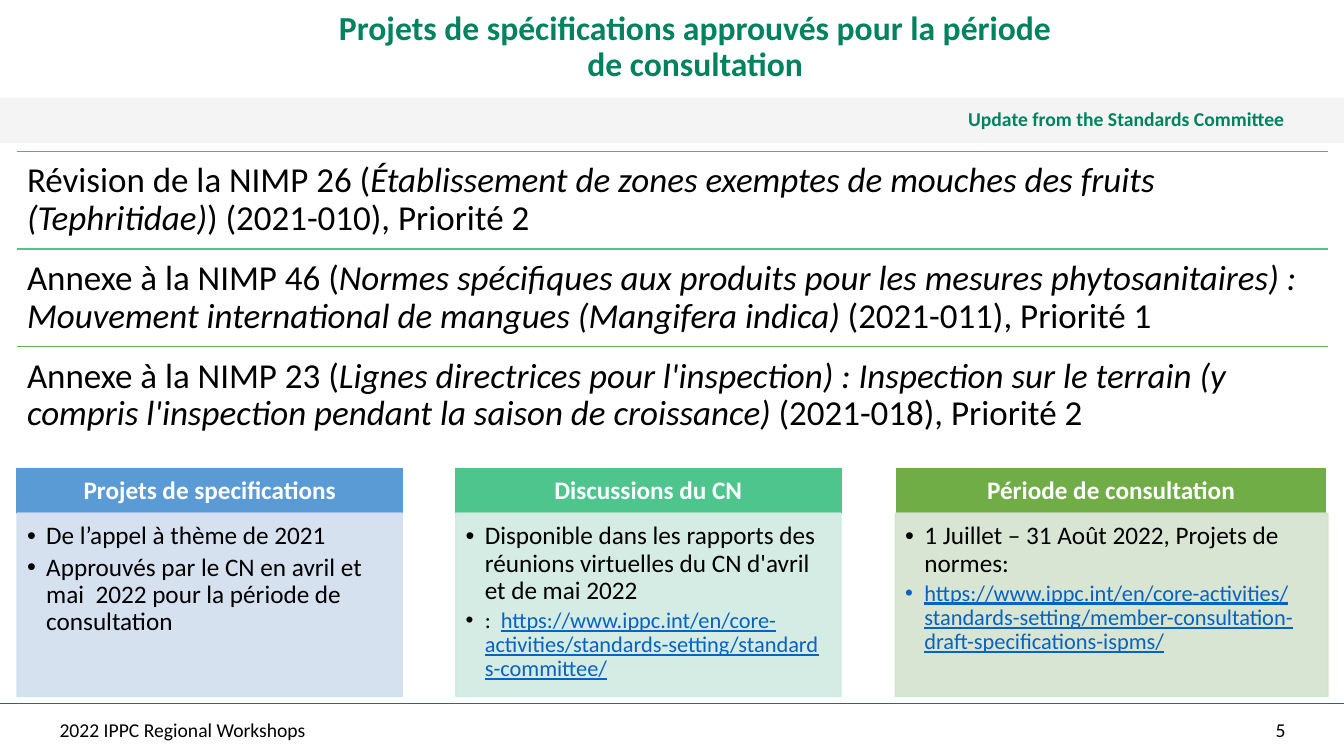
from lxml import etree
from pptx import Presentation
from pptx.dml.color import RGBColor
from pptx.enum.shapes import MSO_CONNECTOR, MSO_SHAPE
from pptx.enum.text import MSO_ANCHOR, PP_ALIGN
from pptx.oxml.ns import qn
from pptx.util import Inches, Pt

RECT = MSO_SHAPE.RECTANGLE
STRAIGHT = MSO_CONNECTOR.STRAIGHT
MIDDLE, TOP = MSO_ANCHOR.MIDDLE, MSO_ANCHOR.TOP
LEFT, CENTER, RIGHT = PP_ALIGN.LEFT, PP_ALIGN.CENTER, PP_ALIGN.RIGHT

GREEN = RGBColor(0x00, 0x82, 0x5F)
BLACK = RGBColor(0x00, 0x00, 0x00)
WHITE = RGBColor(0xFF, 0xFF, 0xFF)
BAND_GREY = RGBColor(0xE7, 0xE6, 0xE6)
LINK_BLUE = RGBColor(0x05, 0x63, 0xC1)
BLUE = RGBColor(0x5B, 0x9B, 0xD5)
MINT = RGBColor(0x4D, 0xC5, 0x8D)
LEAF = RGBColor(0x70, 0xAD, 0x47)
PALE_BLUE = RGBColor(0xD2, 0xDE, 0xEF)
PALE_MINT = RGBColor(0xD0, 0xEA, 0xE1)
PALE_LEAF = RGBColor(0xD5, 0xE3, 0xCF)

WIDTH = 13.33
prs = Presentation()
prs.slide_width, prs.slide_height = Inches(WIDTH), Inches(7.5)
slide = prs.slides.add_slide(prs.slide_layouts[6])
shapes = slide.shapes


def write(box, paragraphs, insets, anchor=MIDDLE, align=LEFT, bullets=False):
    """Fill a box; each run is (text, size, colour, set of font styles)."""
    frame = box.text_frame
    frame.word_wrap = True
    frame.vertical_anchor = anchor
    (frame.margin_left, frame.margin_top,
     frame.margin_right, frame.margin_bottom) = [Inches(i) for i in insets]
    for index, runs in enumerate(paragraphs):
        paragraph = frame.add_paragraph() if index else frame.paragraphs[0]
        paragraph.alignment = align
        paragraph.line_spacing = 0.9
        if bullets:
            paragraph.space_after = Pt(3)
            properties = paragraph._p.get_or_add_pPr()
            properties.set("marL", str(Inches(0.19)))
            properties.set("indent", str(-Inches(0.19)))
            etree.SubElement(properties, qn("a:buFont"), typeface="Arial")
            etree.SubElement(properties, qn("a:buChar"), char="•")
        for text, size, colour, styles in runs:
            run = paragraph.add_run()
            run.text = text
            font = run.font
            font.name, font.size, font.color.rgb = "Calibri", Pt(size), colour
            font.bold = "bold" in styles
            font.italic = "italic" in styles
            font.underline = "underline" in styles


def paint(shape, colour, opacity=100, outlined=True):
    shape.shadow.inherit = False
    shape.fill.solid()
    shape.fill.fore_color.rgb = colour
    if outlined:
        shape.line.color.rgb = colour
        shape.line.width = Pt(1)
    else:
        shape.line.fill.background()
    for colour_element in shape._element.spPr.iter(qn("a:srgbClr")):
        if opacity < 100:
            etree.SubElement(colour_element, qn("a:alpha"), val=str(opacity * 1000))


# Rules: footer line and one line above each specification
ROW_LEFT, ROW_TOP, ROW_WIDTH, ROW_HEIGHT = 0.17, 1.5, 13, 0.97
rules = [(0, WIDTH, 6.98, GREEN)]
for row, colour in enumerate([BLUE, MINT, LEAF]):
    rules.append((ROW_LEFT, ROW_LEFT + ROW_WIDTH, ROW_TOP + row * ROW_HEIGHT, colour))
for start, end, y, colour in rules:
    rule = shapes.add_connector(STRAIGHT, Inches(start), Inches(y), Inches(end), Inches(y))
    rule.line.color.rgb = colour
    rule.line.width = Pt(1)
    etree.SubElement(rule._element.spPr, qn("a:effectLst"))

# Title, subtitle band and footer
title = shapes.add_textbox(Inches(2.61), 0, Inches(8.37), Inches(1))
write(title, [[("Projets de spécifications approuvés pour la période de consultation",
                24, GREEN, {"bold"})]], (0.59, 0, 0.39, 0.05), align=CENTER)

MARGINS = (0.59, 0.05, 0.59, 0.05)
band = shapes.add_shape(RECT, 0, Inches(0.97), Inches(WIDTH), Inches(0.45))
paint(band, BAND_GREY, 42, outlined=False)
write(band, [[("Update from the Standards Committee", 14, GREEN, {"bold"})]],
      MARGINS, align=RIGHT)

event = shapes.add_textbox(0, Inches(7.06), Inches(8.25), Inches(0.38))
write(event, [[("2022 IPPC Regional Workshops", 14, BLACK, {})]], MARGINS)
page_number = shapes.add_textbox(Inches(11.92), Inches(7.06), Inches(1.42), Inches(0.38))
write(page_number, [[("5", 14, BLACK, {})]], MARGINS, align=RIGHT)

# Draft specifications
specifications = [
    ("Révision de la NIMP 26 (",
     "Établissement de zones exemptes de mouches des fruits (Tephritidae)",
     ") (2021-010), Priorité 2"),
    ("Annexe à la NIMP 46 (",
     "Normes spécifiques aux produits pour les mesures phytosanitaires) : "
     "Mouvement international de mangues (Mangifera indica) ",
     "(2021-011), Priorité 1"),
    ("Annexe à la NIMP 23 (",
     "Lignes directrices pour l'inspection) : Inspection sur le terrain "
     "(y compris l'inspection pendant la saison de croissance) ",
     "(2021-018), Priorité 2"),
]
for row, (standard, topic, number) in enumerate(specifications):
    specification = shapes.add_textbox(
        Inches(ROW_LEFT), Inches(ROW_TOP + row * ROW_HEIGHT),
        Inches(ROW_WIDTH), Inches(ROW_HEIGHT))
    write(specification, [[(standard, 25, BLACK, {}), (topic, 25, BLACK, {"italic"}),
                           (number, 25, BLACK, {})]], (0.1, 0.1, 0.1, 0.1))

# Cards: heading, its left and width, body left and width, colours, bullets
cards = [
    ("Projets de specifications", 0.17, 3.82, 0.17, 3.82, BLUE, PALE_BLUE, [
        [("De l’appel à thème de 2021", 18, BLACK, {})],
        [("Approuvés par le CN en avril et mai  2022 pour la période de consultation",
          18, BLACK, {})],
    ]),
    ("Discussions du CN", 4.52, 3.82, 4.52, 3.82, MINT, PALE_MINT, [
        [("Disponible dans les rapports des réunions virtuelles du CN d'avril "
          "et de mai 2022", 18, BLACK, {})],
        [(":  ", 16, BLACK, {}),
         ("https://www.ippc.int/en/core-activities/standards-setting/"
          "standards-committee/", 16, LINK_BLUE, {"underline"})],
    ]),
    ("Période de consultation", 8.89, 4.26, 8.88, 4.29, LEAF, PALE_LEAF, [
        [("1 Juillet – 31 Août 2022, Projets de normes:", 18, BLACK, {})],
        [("https://www.ippc.int/en/core-activities/standards-setting/"
          "member-consultation-draft-specifications-ispms/",
          16, LINK_BLUE, {"underline"})],
    ]),
]
for heading, head_left, head_width, body_left, body_width, strong, pale, points in cards:
    header = shapes.add_shape(RECT, Inches(head_left), Inches(4.65),
                              Inches(head_width), Inches(0.44))
    paint(header, strong)
    write(header, [[(heading, 18, WHITE, {"bold"})]], (0.14, 0.08, 0.14, 0.08), align=CENTER)
    body = shapes.add_shape(RECT, Inches(body_left), Inches(5.09),
                            Inches(body_width), Inches(1.82))
    paint(body, pale, 90)
    write(body, points, (0.1, 0.1, 0.14, 0.16), anchor=TOP, bullets=True)

prs.save("out.pptx")
